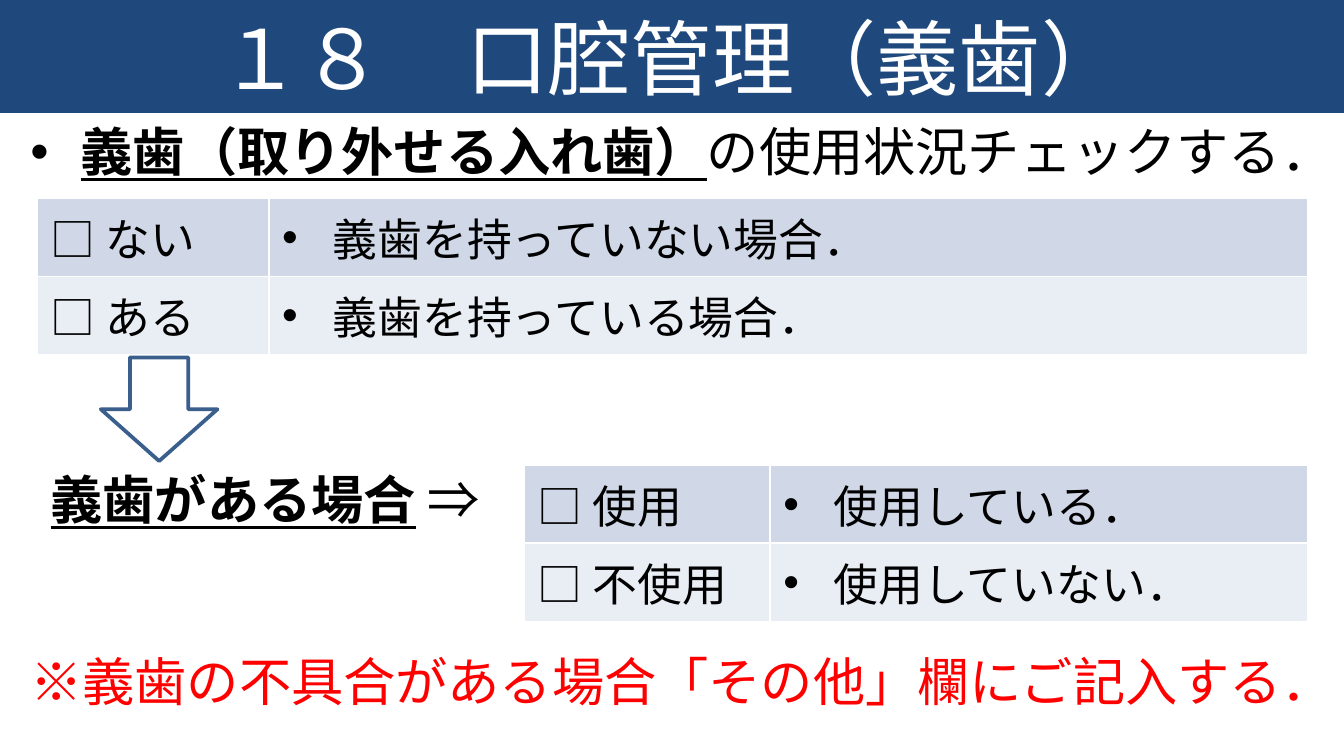
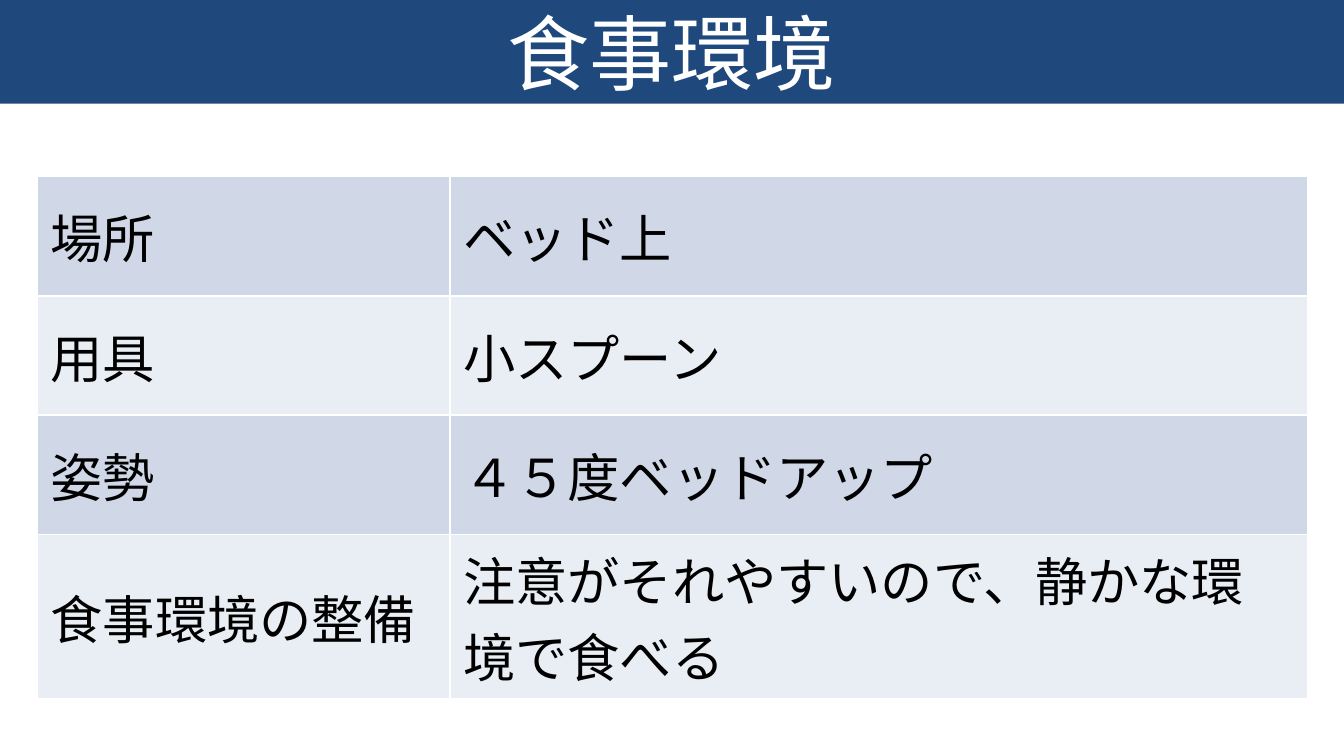
from dataclasses import dataclass

from lxml import etree
from pptx import Presentation
from pptx import util as u
from pptx.dml.color import RGBColor
from pptx.enum import shapes, text
from pptx.oxml import ns


@dataclass(frozen=True)
class Theme:
    band: str = "1F497D"
    outline: str = "3A5F8C"
    rows: tuple = ("D0D8E8", "E9EDF4")
    white: str = "FFFFFF"
    black: str = "000000"
    alert: str = "FF0000"
    latin: str = "Calibri"
    cjk: str = "Noto Sans CJK JP"
    title: int = 44
    body: int = 28
    cell: int = 24
    indent: int = 27


T = Theme()


def write(p, words, size=T.body, color=T.black, font=T.cjk, strong=False, bullet=None):
    if bullet is not None:
        p.space_before = u.Pt(0)
        pPr = p._p.get_or_add_pPr()
        indent = u.Pt(T.indent) if bullet else 0
        pPr.set("marL", str(indent))
        pPr.set("indent", str(-indent))
        if bullet:
            etree.SubElement(pPr, ns.qn("a:buFont")).set("typeface", "Arial")
            etree.SubElement(pPr, ns.qn("a:buChar")).set("char", "•")
        else:
            etree.SubElement(pPr, ns.qn("a:buNone"))
    r = p.add_run()
    r.text = words
    r.font.size = u.Pt(size)
    r.font.bold = strong
    r.font.underline = strong
    r.font.color.rgb = RGBColor.from_string(color)
    r.font.name = font
    ea = etree.Element(ns.qn("a:ea"), typeface=T.cjk)
    r._r.rPr.find(ns.qn("a:latin")).addnext(ea)


def add_grid(s, left, top, widths, heights, rows, anchor, bullet=None, **fmt):
    frame = s.shapes.add_table(len(rows), len(widths), u.Pt(left), u.Pt(top),
                               u.Pt(sum(widths)), u.Pt(sum(heights)))
    tbl = frame.table
    tbl.first_row = tbl.horz_banding = False
    for col, width in zip(tbl.columns, widths):
        col.width = u.Pt(width)
    for i, (row, height) in enumerate(zip(rows, heights)):
        tbl.rows[i].height = u.Pt(height)
        for j, words in enumerate(row):
            cell = tbl.cell(i, j)
            cell.vertical_anchor = anchor
            tcPr = cell._tc.get_or_add_tcPr()
            for side in ("lnL", "lnR", "lnT", "lnB"):
                ln = etree.SubElement(tcPr, ns.qn(f"a:{side}"), w=str(u.Pt(1)))
                fill = etree.SubElement(ln, ns.qn("a:solidFill"))
                etree.SubElement(fill, ns.qn("a:srgbClr"), val=T.white)
            cell.fill.solid()
            cell.fill.fore_color.rgb = RGBColor.from_string(T.rows[i % 2])
            write(cell.text_frame.paragraphs[0], words,
                  bullet=bullet if j else None, **fmt)


prs = Presentation()
prs.slide_width, prs.slide_height = u.Pt(720), u.Pt(405)

slides = []
for layout, heading, height in ((3, "１８\u3000口腔管理（義歯）".replace("\u3000", "　"), 60.5),
                                (5, "食事環境", 55.5)):
    s = prs.slides.add_slide(prs.slide_layouts[layout])
    sp = s.shapes.title
    sp.left, sp.top, sp.width, sp.height = 0, 0, prs.slide_width, u.Pt(height)
    sp.fill.solid()
    sp.fill.fore_color.rgb = RGBColor.from_string(T.band)
    tf = sp.text_frame
    tf.auto_size = text.MSO_AUTO_SIZE.NONE
    tf.vertical_anchor = text.MSO_ANCHOR.MIDDLE
    p = tf.paragraphs[0]
    p.alignment = text.PP_ALIGN.CENTER
    write(p, heading, size=T.title, color=T.white, font=T.latin)
    slides.append(s)

s = slides[0]
for idx, top, height in ((1, 60.5, 42.5), (2, 344, 51)):
    sp = s.placeholders[idx]
    sp.left, sp.top, sp.width, sp.height = u.Pt(9), u.Pt(top), u.Pt(711), u.Pt(height)
    sp.text_frame.auto_size = text.MSO_AUTO_SIZE.NONE
    sp.text_frame.margin_right = 0
p = s.placeholders[1].text_frame.paragraphs[0]
write(p, "義歯（取り外せる入れ歯）", strong=True, bullet=True)
write(p, "の使用状況チェックする．")
write(s.placeholders[2].text_frame.paragraphs[0],
      "※義歯の不具合がある場合「その他」欄にご記入する．", color=T.alert, bullet=False)

for left, top, widths, rows in (
    (20, 106, (124, 556.5), (("□ ない", "義歯を持っていない場合．"),
                             ("□ ある", "義歯を持っている場合．"))),
    (281, 249, (131.5, 288), (("□ 使用", "使用している．"),
                              ("□ 不使用", "使用していない．"))),
):
    add_grid(s, left, top, widths, (39.5, 38.5), rows, text.MSO_ANCHOR.TOP,
             bullet=True, size=T.cell)

sp = s.shapes.add_textbox(u.Pt(20), u.Pt(247), u.Pt(255), u.Pt(41))
tf = sp.text_frame
tf.word_wrap = True
tf.auto_size = text.MSO_AUTO_SIZE.SHAPE_TO_FIT_TEXT
write(tf.paragraphs[0], "義歯がある場合", strong=True)
write(tf.paragraphs[0], " ⇒")

sp = s.shapes.add_shape(shapes.MSO_SHAPE.DOWN_ARROW, u.Pt(54), u.Pt(191.5), u.Pt(62.5), u.Pt(55.5))
sp.shadow.inherit = False
sp.fill.background()
sp.line.color.rgb = RGBColor.from_string(T.outline)
sp.line.width = u.Pt(2)

environment = (
    ("場所", "ベッド上"),
    ("用具", "小スプーン"),
    ("姿勢", "４５度ベッドアップ"),
    ("食事環境の整備", "注意がそれやすいので、静かな環境で食べる"),
)
add_grid(slides[1], 20, 94.5, (221, 459.5), (64, 64, 64, 86), environment,
         text.MSO_ANCHOR.MIDDLE, font=T.latin)

prs.save("out.pptx")
